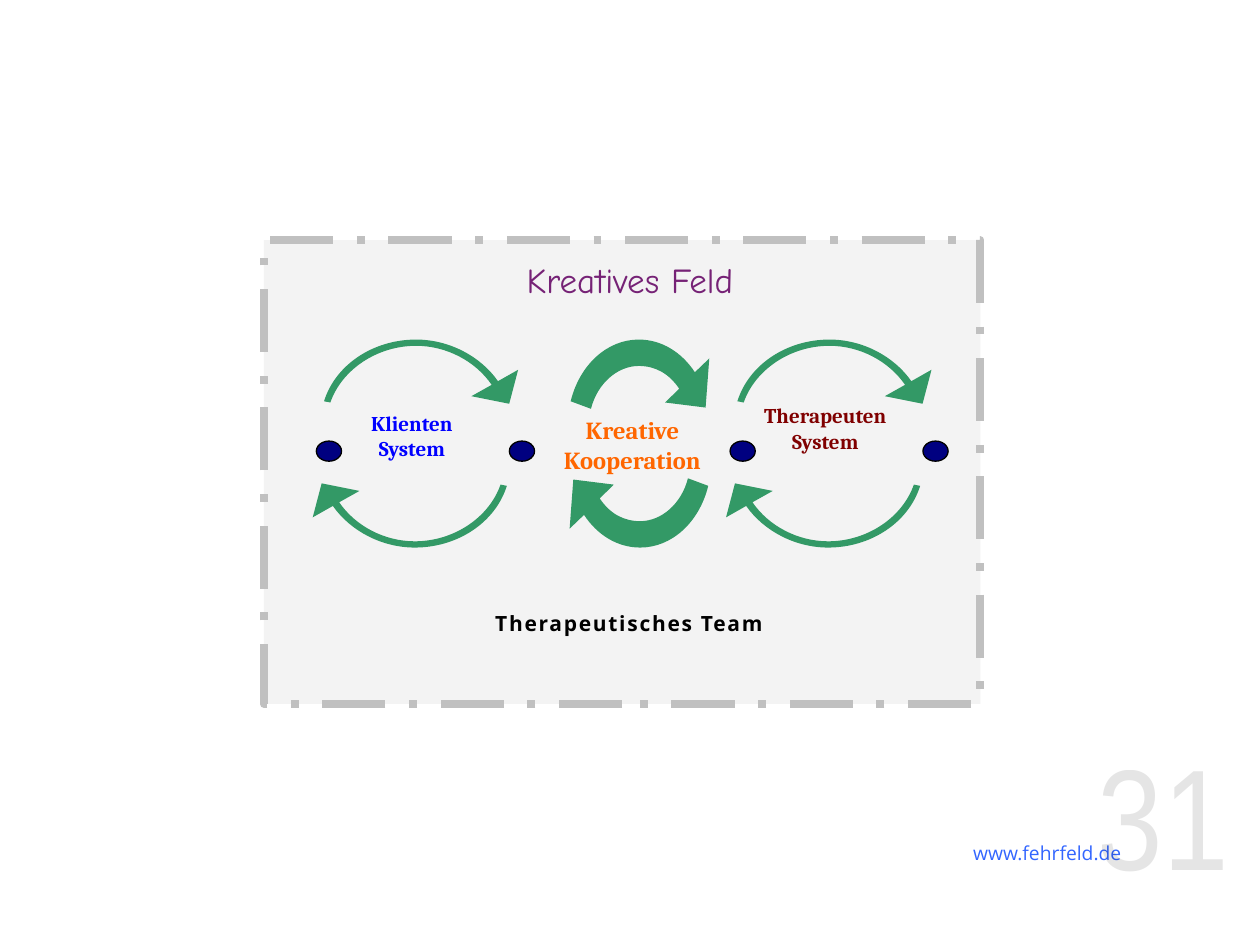
from dataclasses import dataclass

from lxml.etree import SubElement
from pptx import Presentation
from pptx.dml.color import RGBColor
from pptx.enum.dml import MSO_LINE
from pptx.enum.shapes import MSO_SHAPE
from pptx.enum.text import MSO_ANCHOR, PP_ALIGN
from pptx.oxml.ns import qn
from pptx.util import Pt


@dataclass(frozen=True)
class Theme:
    title: str = "660066"
    link: str = "3366FF"
    black: str = "000000"
    field: str = "C0C0C0"
    arrow: str = "339966"
    dot: str = "000080"
    client: str = "0000FF"
    therapist: str = "800000"
    cooperation: str = "FF6600"
    title_size: int = 20
    link_size: int = 11
    number_size: int = 82
    label_size: int = 12
    cooperation_size: int = 14
    title_font: str = "Comic Neue"
    body_font: str = "Open Sans"
    number_font: str = "Arial Narrow"
    label_font: str = "Cambria"


T = Theme()

# text, box (left, top, width, height), format
PAGE_TEXTS = [
    ("Kreatives Feld", (72, 125.7, 576, 68.4),
     dict(size=T.title_size, font=T.title_font, color=T.title, anchor=MSO_ANCHOR.MIDDLE)),
    ("www.fehrfeld.de", (72, 474.1, 576, 26),
     dict(size=T.link_size, font=T.body_font, color=T.link,
          align=PP_ALIGN.RIGHT, anchor=MSO_ANCHOR.MIDDLE)),
    ("31", (592.5, 431.3, 116.6, 67),
     dict(size=T.number_size, font=T.number_font, color=T.black, alpha=10,
          align=PP_ALIGN.RIGHT, anchor=MSO_ANCHOR.MIDDLE)),
]
LABELS = [
    ("Klienten\vSystem", (182.1, 231.8, 106.6, 56.9),
     dict(size=T.label_size, font=T.label_font, color=T.client, bold=True, insets=(5, 2.9))),
    ("Kreative Kooperation", (308.1, 213.1, 106.6, 75.6),
     dict(size=T.cooperation_size, font=T.label_font, color=T.cooperation, bold=True,
          insets=(5, 24.3))),
    ("Therapeuten\vSystem", (418.3, 213.1, 106.6, 94.3),
     dict(size=T.label_size, font=T.label_font, color=T.therapist, bold=True,
          insets=(5, 17.1))),
    ("Therapeutisches Team", (180.2, 345.6, 358.6, 38.2),
     dict(size=T.label_size, font=T.body_font, color=T.black, bold=True, spacing=1)),
]
FIELD = (150.8, 137.2, 409.4, 265)

# Arrow outlines around the box centre: Bezier points of both arcs, then the head
THIN = dict(
    width=110.2,
    inner=[(43.6, -24.5), (34.2, -38.2), (17.6, -46.8), (0.4, -46.8),
           (-22, -46.8), (-42.1, -33.1), (-48.6, -14.4)],
    outer=[(-52.2, -15.1), (-45.7, -36), (-24.1, -50.4), (0.4, -50.4),
           (19.1, -50.4), (37.1, -41), (47.2, -26.6)],
    head=[(58.7, -33.1), (53.6, -13.7), (32, -18)])
THICK = dict(
    width=82.8,
    inner=[(22.7, -22.3), (16.9, -31), (9, -35.3), (-0.4, -35.3),
           (-12.6, -35.3), (-24.1, -25.2), (-27.7, -10.8)],
    outer=[(-39.3, -15.1), (-34.2, -36), (-18.4, -50.4), (-0.4, -50.4),
           (12.6, -50.4), (24.1, -43.2), (31.7, -31.7)],
    head=[(39.9, -39.6), (37.8, -11.5), (14.7, -14.4)])
ARROW_H = 99.4
ARROW_TOPS = [(194.7, 0), (212.8, 180)]  # top, rotation
CYCLES = [(237.4, THIN), (365.4, THICK), (473.6, THIN)]
DOT_W, DOT_H, DOT_Y = 14.4, 11.5, 257.8
DOT_CENTRES = [188, 298.3, 424.4, 534.6]


def rgb(color):
    return RGBColor.from_string(color)


def set_alpha(fill_element, percent):
    color = next(fill_element.iter(qn("a:srgbClr")))
    SubElement(color, qn("a:alpha"), val=str(percent * 1000))


def add_text(slide, text, box, *, size, font, color, bold=False, alpha=None, spacing=None,
             align=PP_ALIGN.CENTER, anchor=MSO_ANCHOR.TOP, insets=(7.2, 3.6)):
    tf = slide.shapes.add_textbox(*map(Pt, box)).text_frame
    tf.word_wrap = True
    tf.vertical_anchor = anchor
    tf.margin_left = tf.margin_right = Pt(insets[0])
    tf.margin_top = Pt(insets[1])
    tf.text = text
    p = tf.paragraphs[0]
    p.alignment = align
    for r in p.runs:
        r.font.size, r.font.name, r.font.bold = Pt(size), font, bold
        r.font.color.rgb = rgb(color)
        props = r.font._element
        if alpha is not None:
            set_alpha(props, alpha)
        if spacing is not None:
            props.set("spc", str(spacing * 100))


def style(sp, fill, line=None, width=0):
    sp.shadow.inherit = False
    sp.fill.solid()
    sp.fill.fore_color.rgb = rgb(fill)
    if line is None:
        sp.line.fill.background()
    else:
        sp.line.color.rgb = rgb(line)
        sp.line.width = Pt(width)


def bend(segments):
    """Turn each three line segments into one cubic Bezier curve."""
    for i in range(0, len(segments), 3):
        first, *others = segments[i:i + 3]
        first.tag = qn("a:cubicBezTo")
        for segment in others:
            first.append(segment[0])
            segment.getparent().remove(segment)


def fit_frame(sp, left, top, width, height):
    """Give the freeform a new frame while its outline stays in place."""
    outline = next(sp._element.iter(qn("a:path")))
    for pt in outline.iter(qn("a:pt")):
        pt.set("x", str(int(pt.get("x")) + sp.left - left))
        pt.set("y", str(int(pt.get("y")) + sp.top - top))
    outline.set("w", str(width))
    outline.set("h", str(height))
    sp.left, sp.top, sp.width, sp.height = left, top, width, height


def add_arrow(slide, centre_x, top, rotation, arrow):
    centre_y = top + ARROW_H / 2
    outline = arrow["inner"] + arrow["outer"] + arrow["head"]
    points = [(Pt(centre_x + x), Pt(centre_y + y)) for x, y in outline]
    builder = slide.shapes.build_freeform(*points[0])
    builder.add_line_segments(points[1:], close=True)
    sp = builder.convert_to_shape()
    segments = list(sp._element.iter(qn("a:lnTo")))
    bend(segments[:6])
    bend(segments[7:13])
    width = arrow["width"]
    fit_frame(sp, *map(Pt, (centre_x - width / 2, top, width, ARROW_H)))
    sp.rotation = rotation
    style(sp, T.arrow)


def main():
    prs = Presentation()
    prs.slide_width, prs.slide_height = Pt(720), Pt(540)
    slide = prs.slides.add_slide(prs.slide_layouts[6])

    for text, box, fmt in PAGE_TEXTS:
        add_text(slide, text, box, **fmt)

    field = slide.shapes.add_shape(MSO_SHAPE.RECTANGLE, *map(Pt, FIELD))
    style(field, T.field, T.field, 4.5)
    field.line.dash_style = MSO_LINE.LONG_DASH_DOT
    set_alpha(field._element.spPr.find(qn("a:solidFill")), 18)

    for centre_x, arrow in CYCLES:
        for top, rotation in ARROW_TOPS:
            add_arrow(slide, centre_x, top, rotation, arrow)
    for x in DOT_CENTRES:
        box = (x - DOT_W / 2, DOT_Y - DOT_H / 2, DOT_W, DOT_H)
        dot = slide.shapes.add_shape(MSO_SHAPE.OVAL, *map(Pt, box))
        style(dot, T.dot, T.black, 0.75)
    for text, box, fmt in LABELS:
        add_text(slide, text, box, **fmt)

    prs.save("out.pptx")


if __name__ == "__main__":
    main()
